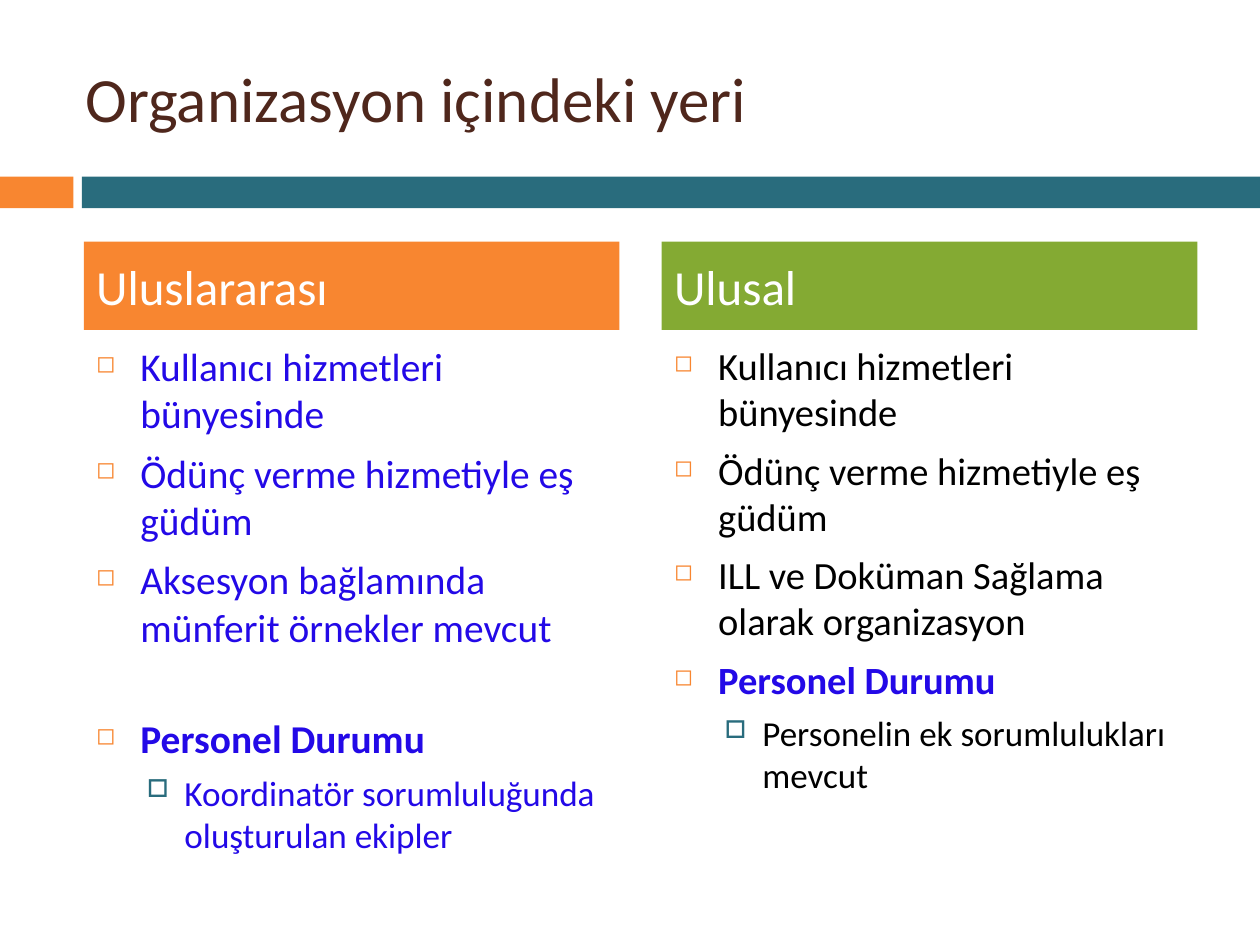
"""Build the slide on the unit's place within the organisation, international beside national."""
import pptx
import pptx.dml.color
import pptx.enum.shapes
import pptx.enum.text
import pptx.oxml
import pptx.oxml.ns
import pptx.util

Cm, Pt = pptx.util.Cm, pptx.util.Pt
Color = pptx.dml.color.RGBColor.from_string
Anchor = pptx.enum.text.MSO_ANCHOR

THEME = {
    "font": "Calibri", "title": "4F271C", "orange": "F88630", "teal": "296C7D",
    "green": "84AA33", "blue": "2309E7", "black": "000000", "white": "FFFFFF",
    "title_size": 36, "header_size": 28,
}
LEVELS = [
    {"indent": 0.89, "hang": 0.89, "before": 7, "sign": "◻", "color": "orange", "percent": 60},
    {"indent": 1.78, "hang": 0.76, "before": 5.5, "sign": "□", "color": "teal", "percent": 70},
]
COLUMNS = [
    {"left": 1.69, "header": "Uluslararası", "fill": "orange", "sizes": (22.5, 20.1), "items": [
        ("Kullanıcı hizmetleri bünyesinde", 0, "blue", False, 0),
        ("Ödünç verme hizmetiyle eş güdüm", 0, "blue", False, 0),
        ("Aksesyon bağlamında münferit örnekler mevcut", 0, "blue", False, 0),
        ("Personel Durumu", 0, "blue", True, 29.5),
        ("Koordinatör sorumluluğunda oluşturulan ekipler", 1, "blue", False, 0)]},
    {"left": 13.34, "header": "Ulusal", "fill": "green", "sizes": (22, 20), "items": [
        ("Kullanıcı hizmetleri bünyesinde", 0, "black", False, 0),
        ("Ödünç verme hizmetiyle eş güdüm", 0, "black", False, 0),
        ("ILL ve Doküman Sağlama olarak organizasyon", 0, "black", False, 0),
        ("Personel Durumu", 0, "blue", True, 0),
        ("Personelin ek sorumlulukları mevcut", 1, "black", False, 0)]},
]
COLUMN_WIDTH = 10.8

deck = pptx.Presentation()
deck.slide_width, deck.slide_height = Cm(25.4), Cm(19.05)
page = deck.slides.add_slide(deck.slide_layouts[6])


def add_box(left, top, width, height, fill=None, anchor=Anchor.MIDDLE):
    place = [Cm(value) for value in (left, top, width, height)]
    if fill:
        box = page.shapes.add_shape(pptx.enum.shapes.MSO_SHAPE.RECTANGLE, *place)
        box.shadow.inherit = False
        box.fill.solid()
        box.fill.fore_color.rgb = Color(THEME[fill])
        box.line.fill.background()
    else:
        box = page.shapes.add_textbox(*place)
    frame = box.text_frame
    frame.word_wrap = True
    frame.vertical_anchor = anchor
    return frame


def write(para, text, size, color, bold=False, before=0):
    para.alignment = pptx.enum.text.PP_ALIGN.LEFT
    para.space_before = Pt(before)
    span = para.add_run()
    span.text = text
    span.font.color.rgb = Color(THEME[color])
    for name, value in {"name": THEME["font"], "size": Pt(size), "bold": bold}.items():
        setattr(span.font, name, value)


add_box(0, 3.56, 1.48, 0.64, "orange")
add_box(1.65, 3.56, 23.75, 0.64, "teal")
title = add_box(1.48, 0.76, 22.65, 2.41)
write(title.paragraphs[0], "Organizasyon içindeki yeri", THEME["title_size"], "title")

for column in COLUMNS:
    body = add_box(column["left"], 6.77, COLUMN_WIDTH, 9.95, anchor=Anchor.TOP)
    for index, (text, depth, color, bold, extra) in enumerate(column["items"]):
        para = body.add_paragraph() if index else body.paragraphs[0]
        level = LEVELS[depth]
        para.level = depth
        write(para, text, column["sizes"][depth], color, bold, level["before"] + extra)
        properties = para._p.get_or_add_pPr()
        properties.set("marL", str(Cm(level["indent"])))
        properties.set("indent", str(-Cm(level["hang"])))
        namespace = pptx.oxml.ns.nsdecls("a")
        for markup in (
            f'<a:buClr {namespace}><a:srgbClr val="{THEME[level["color"]]}"/></a:buClr>',
            f'<a:buSzPct {namespace} val="{level["percent"] * 1000}"/>',
            f'<a:buChar {namespace} char="{level["sign"]}"/>',
        ):
            properties.append(pptx.oxml.parse_xml(markup))

    header = add_box(column["left"], 4.87, COLUMN_WIDTH, 1.78, column["fill"])
    write(header.paragraphs[0], column["header"], THEME["header_size"], "white", before=7)

deck.save("out.pptx")
